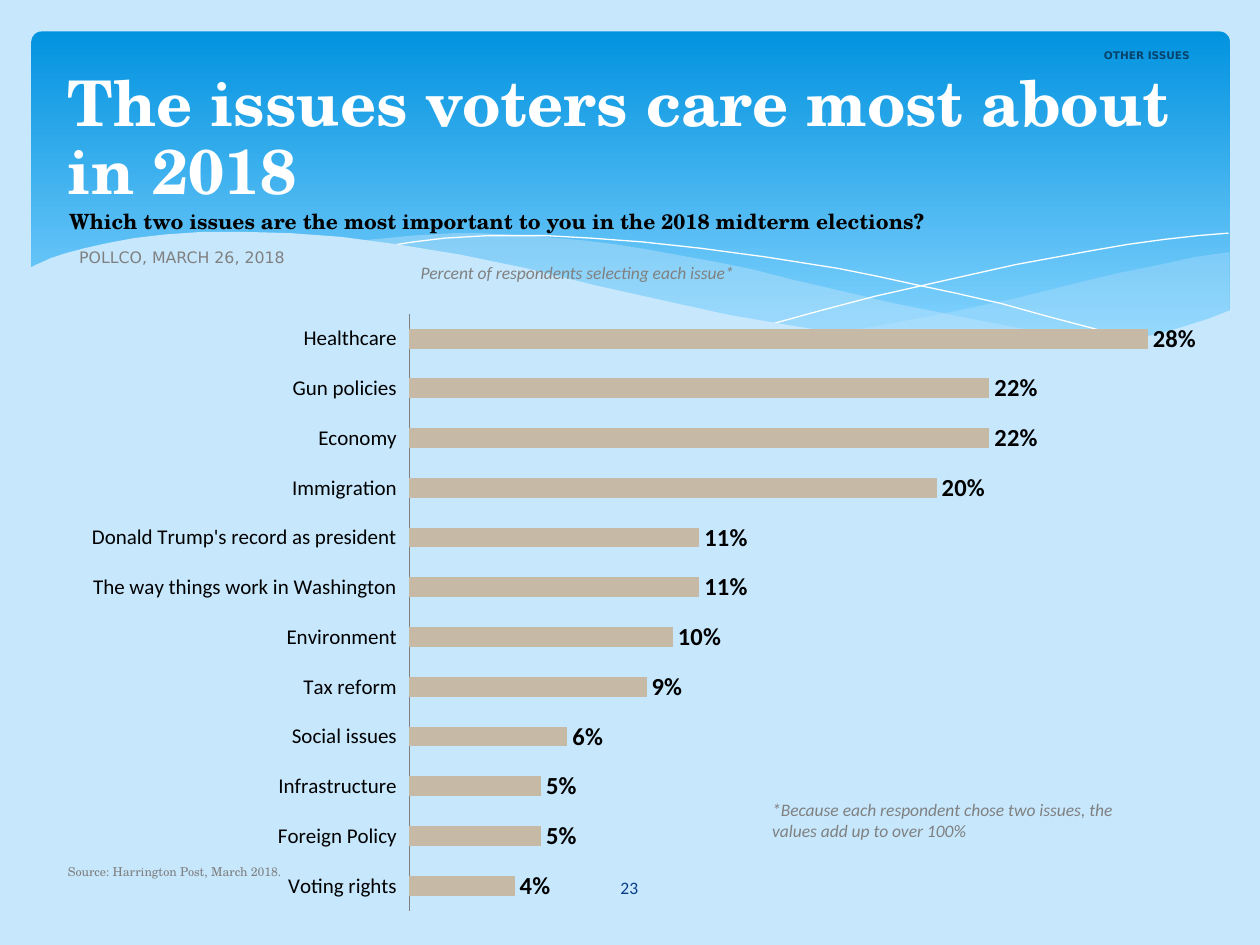
from lxml.etree import SubElement
from pptx import Presentation
from pptx.chart.data import CategoryChartData
from pptx.dml.color import RGBColor
from pptx.enum.chart import XL_CHART_TYPE, XL_LABEL_POSITION, XL_TICK_LABEL_POSITION, XL_TICK_MARK
from pptx.enum.shapes import MSO_SHAPE
from pptx.enum.text import MSO_ANCHOR, PP_ALIGN
from pptx.oxml import parse_xml
from pptx.oxml.ns import nsdecls, qn
from pptx.util import Inches, Pt

WIDE, HIGH = 10, 7.5
PALE, GREY, SAND = "C6E7FC", "808080", "C6B9A5"
SERIF, SANS, PLAIN = "TeX Gyre Schola", "DejaVu Sans", "Calibri"

ISSUES = [
    ("Healthcare", 28), ("Gun policies", 22), ("Economy", 22),
    ("Immigration", 20), ("Donald Trump's record as president", 11),
    ("The way things work in Washington", 11), ("Environment", 10),
    ("Tax reform", 9), ("Social issues", 6), ("Infrastructure", 5),
    ("Foreign Policy", 5), ("Voting rights", 4),
]

TEXTS = [
    ("OTHER ISSUES", (8.64, 0.34, 0.9, 0.2),
     dict(size=6, font=SANS, color="06436B", bold=True, align=PP_ALIGN.RIGHT, wrap=False)),
    ("POLLCO, MARCH 26, 2018", (0.53, 1.92, 3.09, 0.24),
     dict(size=9, font=SANS, color=GREY)),
    ("The issues voters care most about in 2018", (0.44, 0.52, 9.19, 0.67),
     dict(size=36, font=SERIF, color="FFFFFF", bold=True, space=0.9)),
    ("Source: Harrington Post, March 2018.", (0.44, 6.8, 9.02, 0.21),
     dict(size=7, font=SERIF, color=GREY, space=1.1)),
    ("Which two issues are the most important to you in the 2018 midterm elections?",
     (0.45, 1.61, 7.7, 0.3), dict(size=12, font=SERIF, bold=True)),
    ("23", (4.36, 6.84, 1.27, 0.4),
     dict(size=10, color="073E87", align=PP_ALIGN.CENTER, anchor=MSO_ANCHOR.MIDDLE)),
    ("Percent of respondents selecting each issue*", (3.24, 2.03, 3.09, 0.24),
     dict(size=10, color=GREY, italic=True)),
    ("*Because each respondent chose two issues, the values add up to over 100%",
     (6.03, 6.29, 3.09, 0.24), dict(size=10, color=GREY, italic=True)),
]

RIGHT_WAVE = [
    (9.76, 2), (9.48, 2.04), (9.21, 2.1), (8.91, 2.16), (8.61, 2.23), (8.05, 2.37),
    (7.53, 2.48), (7.06, 2.57), (6.61, 2.65), (6.91, 2.69), (7.19, 2.72), (7.45, 2.75),
    (7.69, 2.77), (8.03, 2.78), (8.35, 2.77), (8.63, 2.75), (8.89, 2.72), (9.13, 2.67),
    (9.35, 2.62), (9.49, 2.57), (9.63, 2.52), (9.76, 2.47),
]
MID_WAVE = [
    (8.93, 2.73), (8.66, 2.69), (8.37, 2.65), (8.07, 2.6), (7.75, 2.54), (7.41, 2.47),
    (7.06, 2.4), (6.68, 2.31), (6.29, 2.22), (5.98, 2.14), (5.69, 2.08), (5.41, 2.03),
    (5.14, 1.98), (4.89, 1.94), (4.65, 1.91), (4.42, 1.89), (4.2, 1.87), (3.8, 1.85),
    (3.61, 1.85), (3.28, 1.87), (2.86, 1.91), (3.23, 1.96), (3.62, 2.03), (4.04, 2.11),
    (4.49, 2.22), (4.91, 2.32), (5.3, 2.4), (5.66, 2.48), (6.01, 2.55), (6.34, 2.61),
    (6.65, 2.66), (6.95, 2.7), (7.22, 2.74), (7.48, 2.76), (7.85, 2.78), (8.28, 2.78),
    (8.57, 2.77), (8.76, 2.75),
]
FALL_LINE = [
    (3.09, 1.95), (3.28, 1.92), (3.53, 1.89), (3.87, 1.87), (4.33, 1.87), (4.69, 1.89),
    (5.1, 1.92), (5.56, 1.97), (6.08, 2.04), (6.65, 2.13), (6.95, 2.19), (7.27, 2.26),
    (7.6, 2.33), (7.95, 2.41), (8.31, 2.51), (8.69, 2.61), (9.07, 2.72),
]
RISE_LINE = [
    (6.13, 2.57), (6.53, 2.46), (6.95, 2.35), (7.48, 2.23), (8.06, 2.1), (8.66, 1.99),
    (8.95, 1.94), (9.24, 1.9), (9.51, 1.87), (9.75, 1.85),
]
FRONT_WAVE = [
    (9.77, 2.46), (9.59, 2.53), (9.4, 2.59), (9.2, 2.65), (8.99, 2.69), (8.75, 2.73),
    (8.5, 2.75), (8.09, 2.77), (7.78, 2.76), (7.44, 2.74), (7.08, 2.7), (6.68, 2.65),
    (6.26, 2.58), (5.79, 2.5), (5.29, 2.39), (4.75, 2.27), (4.18, 2.13), (3.65, 2.02),
    (3.16, 1.94), (2.71, 1.88), (2.3, 1.85), (1.93, 1.84), (1.61, 1.84), (1.32, 1.86),
    (1.06, 1.89), (0.85, 1.93), (0.67, 1.97), (0.52, 2.01), (0.4, 2.05), (0.29, 2.1),
    (0.23, 2.13), (0.23, 3.29), (9.77, 3.29),
]


def rgb(code):
    return RGBColor.from_string(code)


def style(font, size, color="000000", name=PLAIN, bold=False, italic=False):
    font.size, font.name, font.bold, font.italic = Pt(size), name, bold, italic
    font.color.rgb = rgb(color)


def write(slide, text, box, size=12, font=PLAIN, color="000000", bold=False, italic=False,
          align=PP_ALIGN.LEFT, anchor=MSO_ANCHOR.TOP, space=None, wrap=True):
    frame = slide.shapes.add_textbox(*map(Inches, box)).text_frame
    frame.word_wrap, frame.vertical_anchor = wrap, anchor
    para = frame.paragraphs[0]
    para.alignment = align
    if space:
        para.line_spacing = space
    run = para.add_run()
    run.text = text
    style(run.font, size, color, font, bold, italic)


def trace(slide, points, fill=None, alpha=100):
    """Draw a filled outline, or an open white hairline when fill is None."""
    grid = [(x * 100, y * 100) for x, y in points]
    pen = slide.shapes.build_freeform(*grid[0], scale=Inches(0.01))
    pen.add_line_segments(grid[1:], close=fill is not None)
    shape = pen.convert_to_shape()
    shape.shadow.inherit = False
    if fill is None:
        shape.fill.background()
        shape.line.color.rgb = rgb("FFFFFF")
        shape.line.width = Pt(0)
        return
    shape.fill.solid()
    shape.fill.fore_color.rgb = rgb(fill)
    shape.line.fill.background()
    if alpha < 100:
        tint = shape.element.spPr.find(".//" + qn("a:srgbClr"))
        SubElement(tint, qn("a:alpha"), val=str(alpha * 1000))


def banner(slide):
    panel = slide.shapes.add_shape(
        MSO_SHAPE.ROUNDED_RECTANGLE, *map(Inches, (0.25, 0.25, 9.51, 2.7)))
    panel.adjustments[0] = 0.03
    panel.shadow.inherit = False
    panel.line.fill.background()
    panel.fill.gradient()
    panel.fill.gradient_angle = 270
    for stop, (place, code) in zip(panel.fill.gradient_stops, [(0, "0293E0"), (0.9, "83D3FE")]):
        stop.position = place
        stop.color.rgb = rgb(code)
    trace(slide, RIGHT_WAVE, PALE, 29)
    trace(slide, MID_WAVE, PALE, 40)
    trace(slide, FALL_LINE)
    trace(slide, RISE_LINE)
    trace(slide, FRONT_WAVE, PALE)


def bars(slide):
    data = CategoryChartData(number_format="0%")
    rows = ISSUES[::-1]
    data.categories = [name for name, _ in rows]
    data.add_series("Series 1", [share / 100 for _, share in rows])
    chart = slide.shapes.add_chart(
        XL_CHART_TYPE.BAR_CLUSTERED, *map(Inches, (0.43, 2.15, 9.21, 5.08)), data).chart
    chart.has_legend = chart.has_title = False
    style(chart.font, 12)

    names, scale = chart.category_axis, chart.value_axis
    names.major_tick_mark = names.minor_tick_mark = XL_TICK_MARK.NONE
    names.tick_label_position = XL_TICK_LABEL_POSITION.LOW
    names.format.line.color.rgb = rgb(GREY)
    names.format.line.width = Pt(0.25)
    style(names.tick_labels.font, 12)
    scale.minimum_scale, scale.maximum_scale = 0, 0.3
    scale.has_major_gridlines = scale.visible = False

    plot = chart.plots[0]
    plot.gap_width, plot.vary_by_categories = 150, False
    fill = plot.series[0].format.fill
    fill.solid()
    fill.fore_color.rgb = rgb(SAND)
    plot.has_data_labels = True
    marks = plot.data_labels
    marks.show_value, marks.position = True, XL_LABEL_POSITION.OUTSIDE_END
    marks.number_format, marks.number_format_is_linked = "0%", False
    style(marks.font, 14, bold=True)

    area = chart.element.find(".//" + qn("c:plotArea"))
    for old in area.findall(qn("c:layout")):
        area.remove(old)
    parts = [("layoutTarget", "inner"), ("xMode", "edge"), ("yMode", "edge"),
             ("x", 0.306), ("y", 0.067), ("w", 0.682), ("h", 0.933)]
    inner = "".join(f'<c:{tag} val="{val}"/>' for tag, val in parts)
    area.insert(0, parse_xml(
        f'<c:layout {nsdecls("c")}><c:manualLayout>{inner}</c:manualLayout></c:layout>'))


def main():
    deck = Presentation()
    deck.slide_width, deck.slide_height = Inches(WIDE), Inches(HIGH)
    slide = deck.slides.add_slide(deck.slide_layouts[6])
    slide.background.fill.solid()
    slide.background.fill.fore_color.rgb = rgb(PALE)
    banner(slide)
    bars(slide)
    for text, box, form in TEXTS:
        write(slide, text, box, **form)
    deck.save("out.pptx")


if __name__ == "__main__":
    main()
